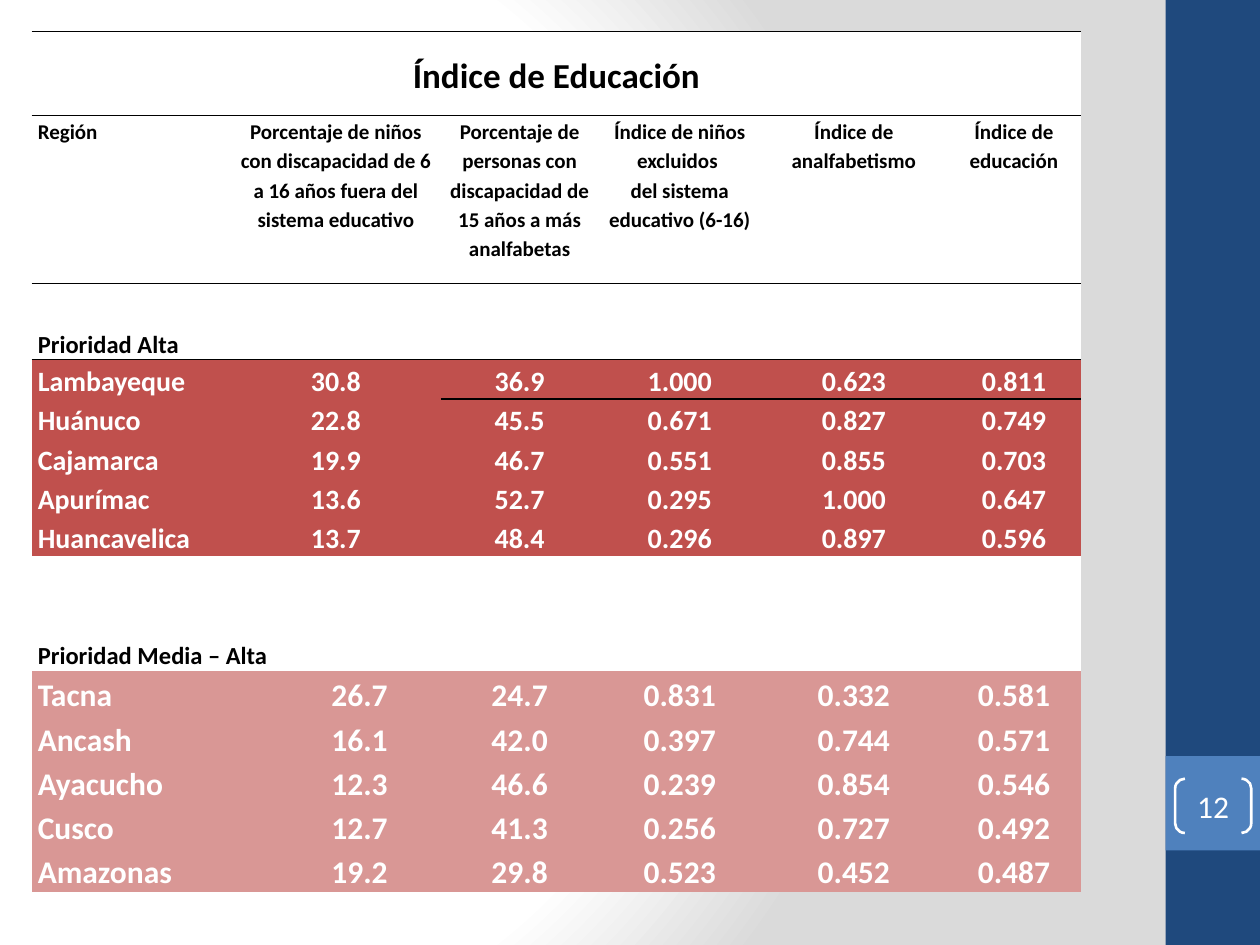
"""Build the slide with the education index table by region."""
from lxml import etree
from pptx import Presentation
from pptx.dml.color import RGBColor
from pptx.enum.shapes import MSO_SHAPE as SHAPE
from pptx.enum.text import MSO_ANCHOR as ANCHOR, PP_ALIGN as ALIGN
from pptx.oxml import parse_xml
from pptx.oxml.ns import nsdecls, qn
from pptx.util import Pt

WHITE, BLACK, RED, PINK = "FFFFFF", "000000", "C0504D", "D99795"
NAVY, BLUE, GREY = "1F497D", "4F81BD", "DADADA"
NO_STYLE = "{2D5ABB26-0587-4C30-8999-92F81FD0307C}"
rgb = RGBColor.from_string


def write(tf, text, size, color=BLACK, bold=True, align=ALIGN.CENTER, spacing=1.15):
    p = tf.paragraphs[0]
    p.alignment = align
    p.line_spacing = spacing
    for i, line in enumerate(text.split("\n")):
        if i:
            p.add_line_break()
        r = p.add_run()
        r.text = line
        r.font.name = "Calibri"
        r.font.size = Pt(size)
        r.font.bold = bold
        r.font.color.rgb = rgb(color)


def add_border(cell, side):
    ln = parse_xml(
        f'<a:{side} {nsdecls("a")} w="12700"><a:solidFill><a:srgbClr val="{BLACK}"/>'
        f'</a:solidFill><a:prstDash val="solid"/></a:{side}>')
    cell._tc.get_or_add_tcPr().insert(0, ln)


prs = Presentation()
prs.slide_width, prs.slide_height = Pt(720), Pt(540)
s = prs.slides.add_slide(prs.slide_layouts[6])

stops = "".join(f'<a:gs pos="{pos * 1000}"><a:srgbClr val="{color}"/></a:gs>'
                for pos, color in [(0, WHITE), (75, WHITE), (100, GREY)])
s.element.cSld.insert(0, parse_xml(
    f'<p:bg {nsdecls("p", "a")}><p:bgPr><a:gradFill rotWithShape="1"><a:gsLst>{stops}</a:gsLst>'
    '<a:path path="circle"><a:fillToRect l="20000" t="50000" r="100000" b="50000"/></a:path>'
    '</a:gradFill><a:effectLst/></p:bgPr></p:bg>'))

for top, height, color in [(0, 540, NAVY), (432, 54, BLUE)]:
    sp = s.shapes.add_shape(SHAPE.RECTANGLE, Pt(666), Pt(top), Pt(54), Pt(height))
    sp.shadow.inherit = False
    sp.fill.solid()
    sp.fill.fore_color.rgb = rgb(color)
    sp.line.fill.background()

sp = s.shapes.add_shape(SHAPE.DOUBLE_BRACKET, Pt(671.5), Pt(445), Pt(43.5), Pt(31))
sp.adjustments[0] = 0.18
sp.shadow.inherit = False
sp.fill.background()
sp.line.color.rgb = rgb(WHITE)
sp.line.width = Pt(1.5)
tf = sp.text_frame
tf.margin_left = tf.margin_right = tf.margin_top = tf.margin_bottom = 0
tf.vertical_anchor = ANCHOR.MIDDLE
write(tf, "12", 18, WHITE, bold=False, spacing=1)

headers = ["Región",
           "Porcentaje de niños con discapacidad de 6 a 16 años fuera del sistema educativo",
           "Porcentaje de personas con discapacidad de 15 años a más analfabetas",
           "Índice de niños excluidos \ndel sistema educativo (6-16)",
           "Índice de analfabetismo", "Índice de educación"]
high = [["Lambayeque", "30.8", "36.9", "1.000", "0.623", "0.811"],
        ["Huánuco", "22.8", "45.5", "0.671", "0.827", "0.749"],
        ["Cajamarca", "19.9", "46.7", "0.551", "0.855", "0.703"],
        ["Apurímac", "13.6", "52.7", "0.295", "1.000", "0.647"],
        ["Huancavelica", "13.7", "48.4", "0.296", "0.897", "0.596"]]
medium = [["Tacna", "26.7", "24.7", "0.831", "0.332", "0.581"],
          ["Ancash", "16.1", "42.0", "0.397", "0.744", "0.571"],
          ["Ayacucho", "12.3", "46.6", "0.239", "0.854", "0.546"],
          ["Cusco", "12.7", "41.3", "0.256", "0.727", "0.492"],
          ["Amazonas", "19.2", "29.8", "0.523", "0.452", "0.487"]]

# Each row: texts, height, size, text colour, fill, anchor, first and last merged column
rows = [(["Índice de Educación"], 48, 20, BLACK, WHITE, ANCHOR.MIDDLE, 0, 6),
        (headers, 96, 12, BLACK, WHITE, ANCHOR.TOP, 1, 2),
        (["Prioridad Alta"], 43.5, 14, BLACK, WHITE, ANCHOR.BOTTOM, 1, 2)]
rows += [(texts, 22, 16, WHITE, RED, ANCHOR.BOTTOM, 1, 2) for texts in high]
rows += [(["Prioridad Media – Alta"], 65.5, 14, BLACK, WHITE, ANCHOR.BOTTOM, 0, 2)]
rows += [(texts, 22, 18, WHITE, PINK, ANCHOR.BOTTOM, 0, 1) for texts in medium]
widths = [114, 27, 93, 90, 93, 106, 77]

frame = s.shapes.add_table(len(rows), len(widths), Pt(18), Pt(18),
                           Pt(sum(widths)), Pt(sum(row[1] for row in rows)))
table = frame.table
table.first_row = table.horz_banding = False
etree.SubElement(table._tbl.tblPr, qn("a:tableStyleId")).text = NO_STYLE
style_ids = table._tbl.tblPr.findall(qn("a:tableStyleId"))
for extra in style_ids[:-1]:
    table._tbl.tblPr.remove(extra)
for column, width in zip(table.columns, widths):
    column.width = Pt(width)

for i, (texts, height, size, color, fill, anchor, first, last) in enumerate(rows):
    table.rows[i].height = Pt(height)
    for j in range(len(widths)):
        cell = table.cell(i, j)
        cell.margin_left = cell.margin_right = Pt(3.6)
        cell.margin_top = cell.margin_bottom = 0
        cell.vertical_anchor = anchor
        cell.fill.solid()
        cell.fill.fore_color.rgb = rgb(fill)
        if i < 2 or (i == 2 and j > 2):
            add_border(cell, "lnB")
        if i < 3 or (i == 3 and j > 2):
            add_border(cell, "lnT")
    table.cell(i, first).merge(table.cell(i, last))
    starts = [j for j in range(len(widths)) if not first < j <= last]
    for j, text in zip(starts, texts):
        align = ALIGN.LEFT if j == 0 and i else ALIGN.CENTER
        write(table.cell(i, j).text_frame, text, size, color, align=align)

prs.save("out.pptx")
